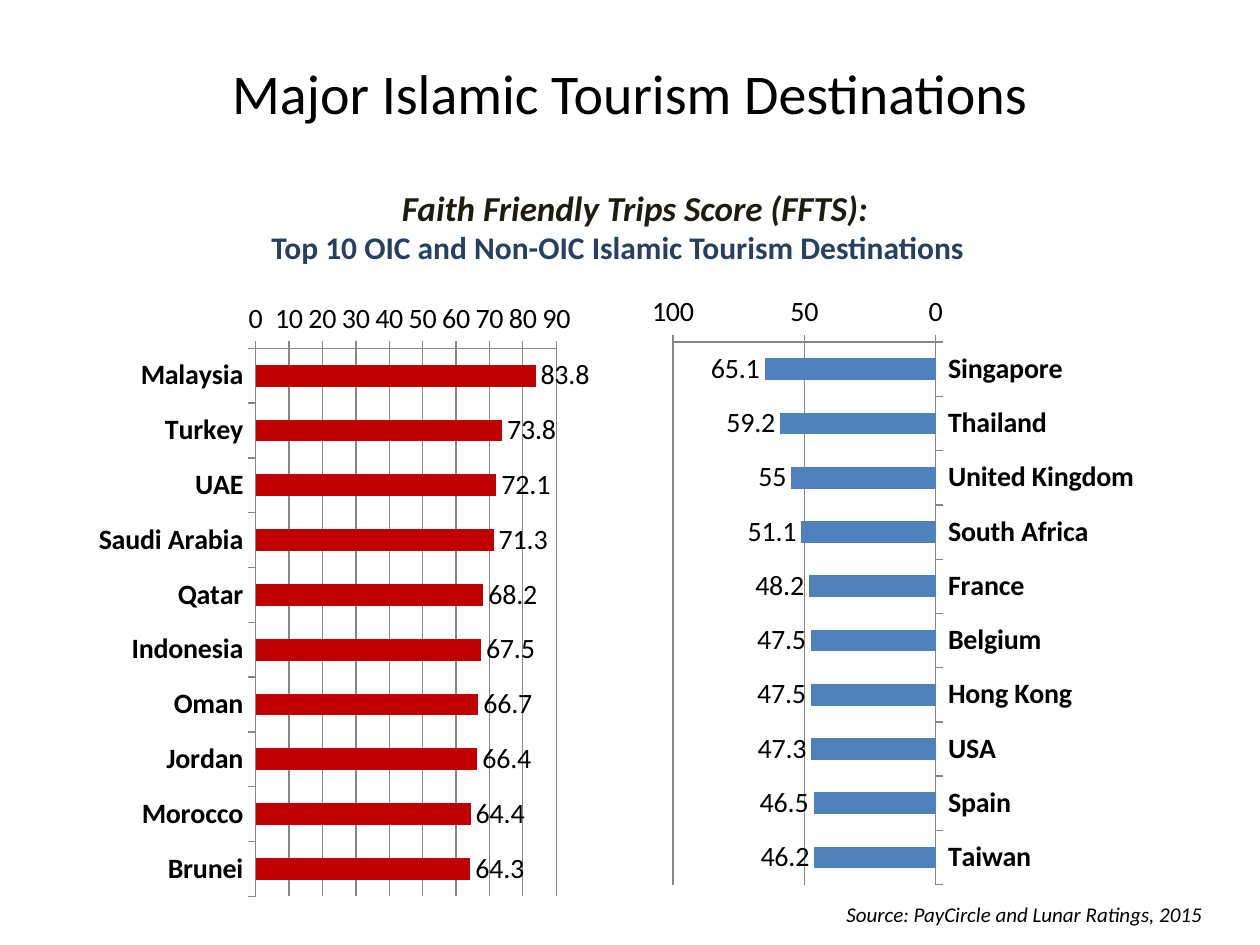
from lxml.etree import SubElement
from pptx import Presentation
from pptx.chart.data import CategoryChartData
from pptx.dml.color import RGBColor
from pptx.enum.chart import XL_CHART_TYPE, XL_LABEL_POSITION, XL_TICK_MARK
from pptx.enum.text import MSO_ANCHOR, MSO_AUTO_SIZE, PP_ALIGN
from pptx.oxml.ns import qn
from pptx.util import Inches, Pt

HUES = {"ink": "000000", "head": "1E1C11", "navy": "254061",
        "red": "C00000", "blue": "4F81BD", "grid": "868686"}
FACE = "Calibri"

OIC = {"Malaysia": 83.8, "Turkey": 73.8, "UAE": 72.1, "Saudi Arabia": 71.3,
       "Qatar": 68.2, "Indonesia": 67.5, "Oman": 66.7, "Jordan": 66.4,
       "Morocco": 64.4, "Brunei": 64.3}
OTHERS = {"Singapore": 65.1, "Thailand": 59.2, "United Kingdom": 55,
          "South Africa": 51.1, "France": 48.2, "Belgium": 47.5,
          "Hong Kong": 47.5, "USA": 47.3, "Spain": 46.5, "Taiwan": 46.2}


class Deck:
    def __init__(self, wide, high):
        self.prs = Presentation()
        self.prs.slide_width = Inches(wide)
        self.prs.slide_height = Inches(high)
        self.slide = self.prs.slides.add_slide(self.prs.slide_layouts[5])

    def place(self, left, top, wide, high):
        w, h = self.prs.slide_width, self.prs.slide_height
        return [int(v) for v in (left * w / 100, top * h / 100,
                                 wide * w / 100, high * h / 100)]

    def style(self, font, size, hue="ink", bold=False, slant=False):
        font.name, font.size = FACE, Pt(size)
        font.bold, font.italic = bold, slant
        font.color.rgb = RGBColor.from_string(HUES[hue])

    def title(self, box, text, size):
        shape = self.slide.shapes.title
        shape.left, shape.top, shape.width, shape.height = self.place(*box)
        frame = shape.text_frame
        frame.text = text
        frame.vertical_anchor = MSO_ANCHOR.MIDDLE
        frame.paragraphs[0].alignment = PP_ALIGN.CENTER
        self.style(frame.paragraphs[0].runs[0].font, size)

    def text(self, box, lines, wrap=True):
        frame = self.slide.shapes.add_textbox(*self.place(*box)).text_frame
        frame.word_wrap = wrap
        frame.auto_size = MSO_AUTO_SIZE.SHAPE_TO_FIT_TEXT
        frame.text = "\n".join(line for line, _, _ in lines)
        for para, (_, align, look) in zip(frame.paragraphs, lines):
            para.alignment = align
            self.style(para.runs[0].font, **look)

    def bars(self, box, plot, ranks, hue, top, step, flip=False):
        data = CategoryChartData()
        data.categories = list(ranks)
        data.add_series("Series 1", list(ranks.values()))
        chart = self.slide.shapes.add_chart(
            XL_CHART_TYPE.BAR_CLUSTERED, *self.place(*box), data).chart
        chart.has_title = chart.has_legend = False
        self.style(chart.font, 16)

        names, scale = chart.category_axis, chart.value_axis
        names.reverse_order, scale.reverse_order = True, flip
        scale.minimum_scale, scale.maximum_scale = 0, top
        scale.major_unit = step
        scale.has_major_gridlines = True
        self.style(names.tick_labels.font, 16, bold=True)
        grey = RGBColor.from_string(HUES["grid"])
        for axis in (names, scale):
            axis.major_tick_mark = XL_TICK_MARK.OUTSIDE
            axis.format.line.color.rgb = grey
        scale.major_gridlines.format.line.color.rgb = grey

        group = chart.plots[0]
        group.gap_width, group.vary_by_categories = 150, False
        fill = group.series[0].format.fill
        fill.solid()
        fill.fore_color.rgb = RGBColor.from_string(HUES[hue])
        group.has_data_labels = True
        group.data_labels.show_value = True
        group.data_labels.position = XL_LABEL_POSITION.OUTSIDE_END
        self.style(group.data_labels.font, 16)
        self.fit(chart, plot)

    def fit(self, chart, plot):
        area = chart.element.find(".//" + qn("c:plotArea"))
        for old in area.findall(qn("c:layout")):
            area.remove(old)
        frame = SubElement(area, qn("c:layout"))
        area.insert(0, frame)
        inner = SubElement(frame, qn("c:manualLayout"))
        rules = [("layoutTarget", "inner"), ("xMode", "edge"),
                 ("yMode", "edge"), *zip("xywh", plot)]
        for tag, value in rules:
            SubElement(inner, qn("c:" + tag)).set("val", str(value))

    def save(self):
        self.prs.save("out.pptx")


def main():
    deck = Deck(10, 7.5)
    deck.title((5, 4, 90, 11.6), "Major Islamic Tourism Destinations", 32)
    deck.bars((6.15, 30.2, 44.2, 66.67), (0.32, 0.1, 0.54, 0.87),
              OIC, "red", 90, 10)
    deck.bars((50.08, 28.95, 41.7, 66), (0.08, 0.11, 0.5, 0.87),
              OTHERS, "blue", 100, 50, flip=True)
    deck.text((66.2, 94.8, 33.7, 4), [
        ("Source: PayCircle and Lunar Ratings, 2015", PP_ALIGN.LEFT,
         dict(size=12, slant=True))], wrap=False)
    deck.text((20, 19.07, 60.8, 9.87), [
        ("Faith Friendly Trips Score (FFTS):", PP_ALIGN.CENTER,
         dict(size=20, hue="head", bold=True, slant=True)),
        (" Top 10 OIC and Non-OIC Islamic Tourism Destinations",
         PP_ALIGN.LEFT, dict(size=18, hue="navy", bold=True))])
    deck.save()


if __name__ == "__main__":
    main()
